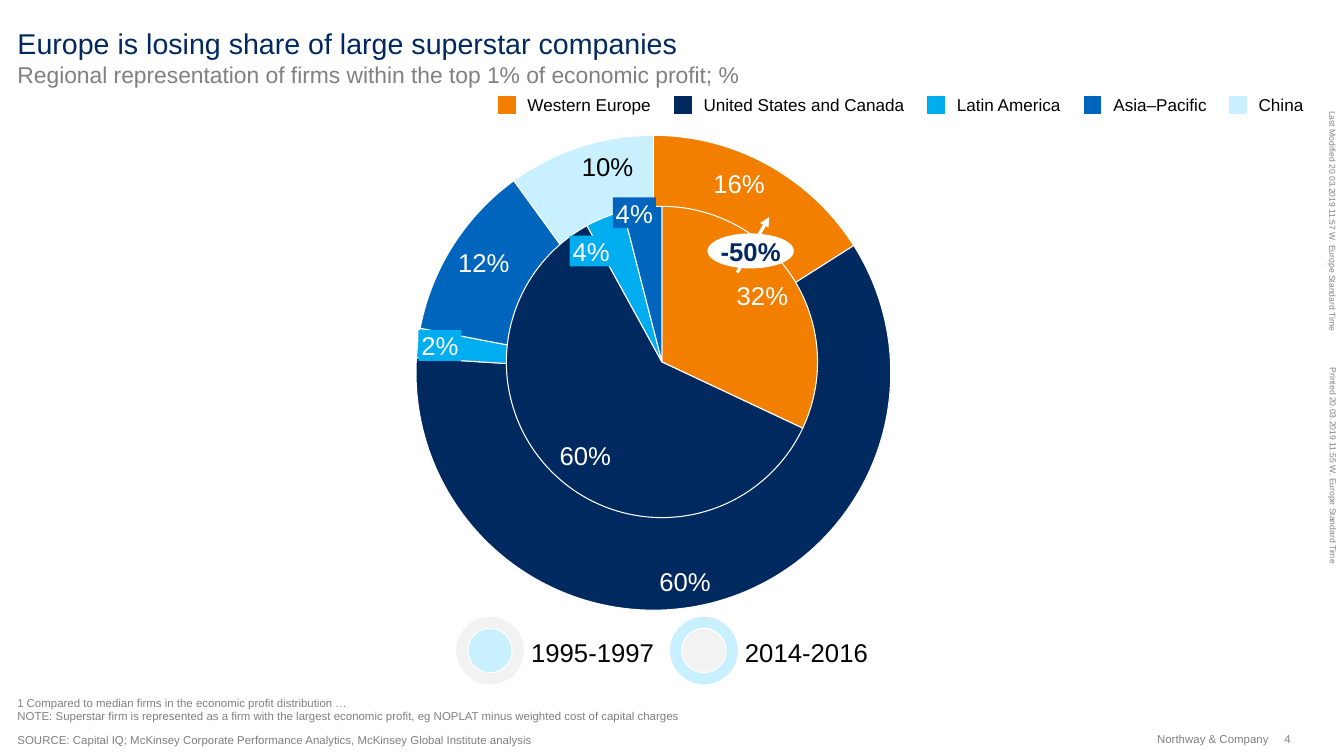
from lxml import etree
from pptx import Presentation
from pptx import util as u
from pptx.chart.data import CategoryChartData
from pptx.dml.color import RGBColor
from pptx.enum import chart as charts, shapes, text
from pptx.oxml.ns import qn

WIDTH, HEIGHT = u.Inches(13.07), u.Inches(7.35)
COLUMN, ROW = WIDTH / 100, HEIGHT / 100
COLOURS = {
    "orange": "F27F00", "navy": "002960", "cyan": "00ADEF", "blue": "0065BD",
    "pale": "C9F0FF", "white": "FFFFFF", "black": "000000",
    "grey": "808080", "light": "F2F2F2",
}
# Label, colour and label width in columns
REGIONS = [
    ("Western Europe", "orange", 9.18),
    ("United States and Canada", "navy", 14.92),
    ("Latin America", "cyan", 7.73),
    ("Asia–Pacific", "blue", 6.89),
    ("China", "pale", 3.29),
]
PERCENT = '0"%"'
TOP, MIDDLE, BOTTOM = (text.MSO_ANCHOR.TOP, text.MSO_ANCHOR.MIDDLE,
                       text.MSO_ANCHOR.BOTTOM)
LEFT, CENTRE, RIGHT = (text.PP_ALIGN.LEFT, text.PP_ALIGN.CENTER,
                       text.PP_ALIGN.RIGHT)


def colour(name):
    return RGBColor.from_string(COLOURS[name])


def grid(x, y, w, h):
    """Turn columns and rows (hundredths of the slide) into lengths."""
    return [round(n * unit) for n, unit in
            zip((x, y, w, h), (COLUMN, ROW, COLUMN, ROW))]


def apply(target, **formats):
    for name, value in formats.items():
        setattr(target, name, value)


def style_font(font, size, ink, bold=False):
    apply(font, size=u.Pt(size), name="Arial", bold=bold)
    font.color.rgb = colour(ink)


def write(box, lines, size, ink, align=LEFT, anchor=TOP, wrap=False,
          bold=False, hang=0, tab=None):
    """Fill a shape with paragraphs; hang and tab are in inches."""
    frame = box.text_frame
    apply(frame, margin_left=0, margin_right=0, margin_top=0, margin_bottom=0,
          word_wrap=wrap, vertical_anchor=anchor,
          auto_size=text.MSO_AUTO_SIZE.NONE)
    for number, line in enumerate(lines):
        para = frame.add_paragraph() if number else frame.paragraphs[0]
        span = para.add_run()
        span.text = line
        apply(para, alignment=align, space_before=u.Pt(0))
        props = para._p.get_or_add_pPr()
        props.set("marL", str(u.Inches(hang)))
        props.set("indent", str(-u.Inches(hang)))
        etree.SubElement(props, qn("a:buNone"))
        if tab:
            stops = etree.SubElement(props, qn("a:tabLst"))
            etree.SubElement(stops, qn("a:tab"), pos=str(u.Inches(tab)), algn="l")
        style_font(span.font, size, ink, bold)


def add_label(owner, place, lines, size, ink, **formats):
    box = owner.add_textbox(*grid(*place))
    write(box, lines, size, ink, **formats)
    return box


def add_block(owner, kind, place, fill, outlined=False):
    block = owner.add_shape(kind, *grid(*place))
    block.shadow.inherit = False
    block.fill.solid()
    block.fill.fore_color.rgb = colour(fill)
    if outlined:
        block.line.color.rgb = colour("white")
        block.line.width = u.Pt(0.75)
    else:
        block.line.fill.background()
    return block


def fill_placeholder(holder, place, line, size, ink):
    left, top, width, height = grid(*place)
    apply(holder, left=left, top=top, width=width, height=height)
    write(holder, [line], size, ink, wrap=True)


def add_legend(page):
    x = 37.03
    for name, fill, width in REGIONS:
        add_block(page.shapes, shapes.MSO_SHAPE.RECTANGLE,
                  (x, 12.65, 1.38, 2.45), fill, outlined=True)
        add_label(page.shapes, (x + 2.22, 12.52, width, 2.72), [name], 12,
                  "black", anchor=MIDDLE)
        x += 2.22 + width + 1.7


def set_plot_area(chart, bounds):
    area = chart._chartSpace.find(".//" + qn("c:plotArea"))
    for old in area.findall(qn("c:layout")):
        area.remove(old)
    layout = etree.Element(qn("c:layout"))
    manual = etree.SubElement(layout, qn("c:manualLayout"))
    settings = [("layoutTarget", "inner"), ("xMode", "edge"), ("yMode", "edge")]
    settings += zip("xywh", bounds)
    for tag, value in settings:
        etree.SubElement(manual, qn("c:" + tag), val=str(value))
    area.insert(0, layout)


def add_pie(page, place, values, fills, label_inks, bounds):
    """Add a pie; label_inks maps each labelled point to its text colour."""
    data = CategoryChartData(number_format=PERCENT)
    data.categories = ["1", "2", "3", "4", "5"]
    data.add_series("Series 1", values)
    chart = page.shapes.add_chart(charts.XL_CHART_TYPE.PIE, *grid(*place),
                                  data).chart
    apply(chart, has_title=False, has_legend=False)
    style_font(chart.font, 10, "black")
    set_plot_area(chart, bounds)
    series = chart.plots[0].series[0]
    series.data_labels.show_value = False
    for number, fill in enumerate(fills):
        point = series.points[number]
        point.format.fill.solid()
        point.format.fill.fore_color.rgb = colour(fill)
        point.format.line.color.rgb = colour("white")
        point.format.line.width = u.Pt(0.75)
        if number in label_inks:
            label = point.data_label
            style_font(label.font, 18, label_inks[number])
            label.position = charts.XL_LABEL_POSITION.INSIDE_END
    for label in series._element.iter(qn("c:dLbl")):
        label.insert(1, etree.Element(qn("c:numFmt"), formatCode=PERCENT,
                                      sourceLinked="0"))


def add_tag(page, x, y, line, fill):
    tag = add_block(page.shapes, shapes.MSO_SHAPE.RECTANGLE,
                    (x, y, 3.2, 4.08), fill)
    write(tag, [line], 18, "white", align=CENTRE, anchor=MIDDLE)


def add_ring_key(page, x, ring, core, period):
    members = page.shapes.add_group_shape().shapes
    oval = shapes.MSO_SHAPE.OVAL
    add_block(members, oval, (x, 81.5, 5.13, 9.12), ring, outlined=True)
    add_block(members, oval, (x + 0.92, 83.13, 3.29, 5.85), core, outlined=True)
    add_label(members, (x + 5.62, 84.22, 9.26, 4.08), [period], 18, "black")


def add_change(page):
    """Draw the arrow between the two shares and its change bubble."""
    start_x, start_y, end_x, end_y = grid(54.86, 36.05, 57.23, 28.71)
    arrow = page.shapes.add_connector(shapes.MSO_CONNECTOR.STRAIGHT,
                                      start_x, start_y, end_x, end_y)
    arrow.line.color.rgb = colour("white")
    arrow.line.width = u.Pt(2.25)
    etree.SubElement(arrow.line._get_or_add_ln(), qn("a:tailEnd"),
                     type="triangle")
    etree.SubElement(arrow._element.spPr, qn("a:effectLst"))
    bubble = add_block(page.shapes, shapes.MSO_SHAPE.OVAL,
                       (52.64, 30.88, 6.43, 4.63), "white")
    write(bubble, ["-50%"], 18, "navy", align=CENTRE, anchor=MIDDLE, bold=True)


def add_footer(page):
    add_label(page.shapes, (1.3, 91.97, 95.41, 3.67), [
        "1\tCompared to median firms in the economic profit distribution …",
        "NOTE: Superstar firm is represented as a firm with the largest economic "
        "profit, eg NOPLAT minus weighted cost of capital charges",
    ], 8, "grey", anchor=BOTTOM, wrap=True, hang=0.09)
    add_label(page.shapes, (1.3, 96.87, 83.24, 1.9), [
        "SOURCE:\tCapital IQ; McKinsey Corporate Performance Analytics, "
        "McKinsey Global Institute analysis",
    ], 8, "grey", anchor=BOTTOM, wrap=True, hang=0.54, tab=0.42)
    add_label(page.shapes, (85.92, 96.87, 8.49, 1.77), ["Northway & Company"],
              8, "grey", align=RIGHT, anchor=MIDDLE)
    add_label(page.shapes, (95.56, 96.87, 1.07, 1.77), ["4"], 8, "grey",
              anchor=MIDDLE)
    for place, stamp in [
        ((90.82, 28.84, 16.68, 1.36), "Last Modified 20.03.2019 11:57"),
        ((91.74, 61.22, 14.92, 1.36), "Printed 20.03.2019 11:55"),
    ]:
        box = add_label(page.shapes, place,
                        [stamp + " W. Europe Standard Time"], 6, "grey")
        box.rotation = 90


def main():
    deck = Presentation()
    apply(deck, slide_width=WIDTH, slide_height=HEIGHT)
    page = deck.slides.add_slide(deck.slide_layouts[1])
    title, body = page.placeholders
    fill_placeholder(title, (1.3, 3.4, 96.17, 4.63),
                     "Europe is losing share of large superstar companies",
                     20, "navy")
    fill_placeholder(body, (1.3, 8.03, 96.17, 3.67),
                     "Regional representation of firms within the top 1% of "
                     "economic profit; %", 16, "grey")
    add_legend(page)
    fills = [fill for _, fill, _ in REGIONS]
    add_pie(page, (30.22, 16.6, 36.8, 65.44), (16, 60, 2, 12, 10), fills,
            {0: "white", 1: "white", 3: "white", 4: "black"},
            (0.02, 0.02, 0.96, 0.96))
    add_tag(page, 31.14, 43.67, "2%", "cyan")
    add_pie(page, (36.04, 25.99, 26.7, 43.81), (32, 60, 4, 4, 0),
            fills[:4] + ["navy"], {0: "white", 1: "white"},
            (0.06, 0.03, 0.87, 0.94))
    add_tag(page, 42.39, 31.16, "4%", "cyan")
    add_tag(page, 45.6, 26.12, "4%", "blue")
    add_change(page)
    add_ring_key(page, 33.9, "light", "pale", "1995-1997")
    add_ring_key(page, 49.81, "pale", "light", "2014-2016")
    add_footer(page)
    deck.save("out.pptx")


if __name__ == "__main__":
    main()
